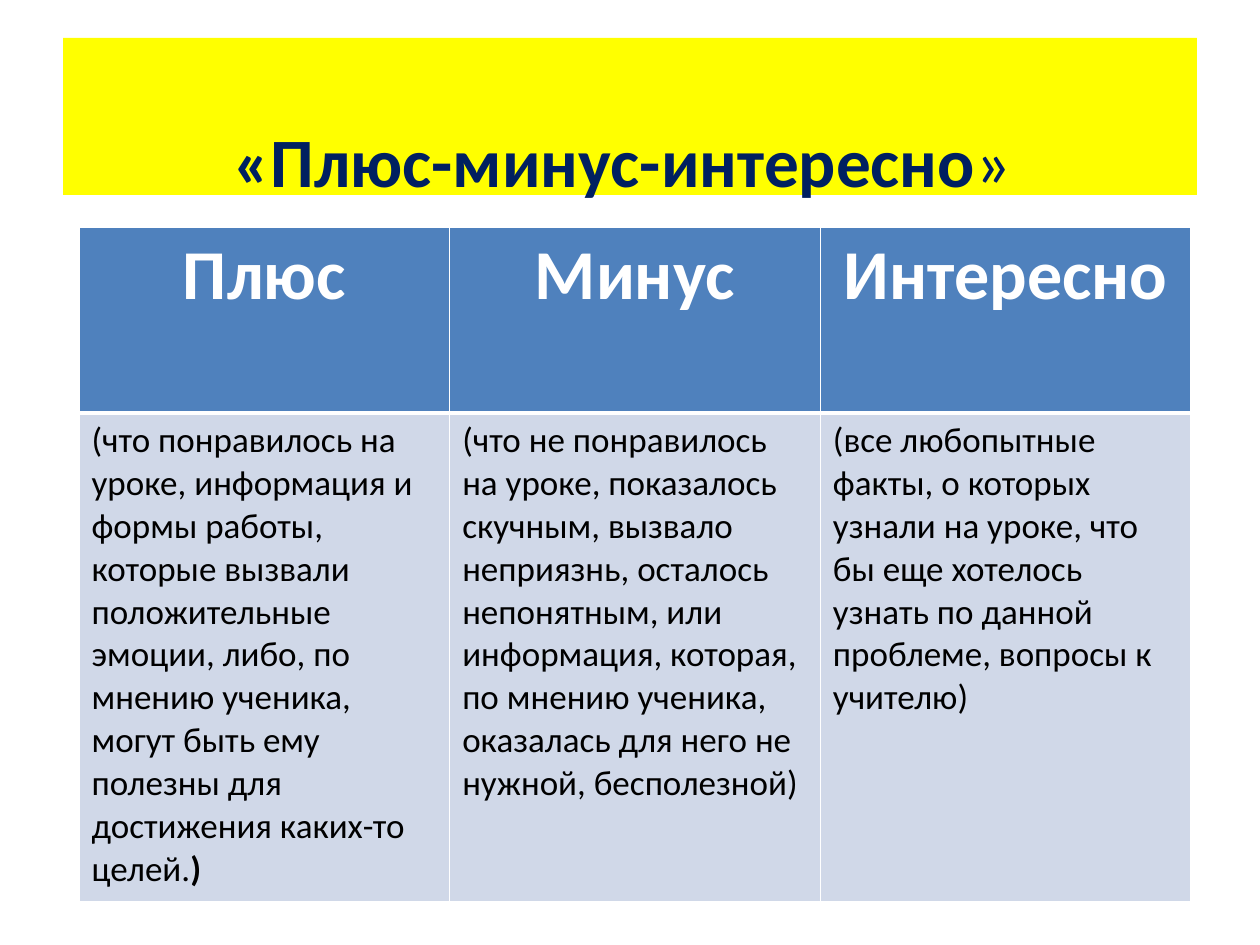
from lxml.etree import SubElement as Sub
from pptx import Presentation
from pptx.dml.color import RGBColor as Rgb
from pptx.enum.text import MSO_ANCHOR as Anchor, PP_ALIGN as Align
from pptx.oxml.ns import qn
from pptx.util import Pt

SCALE = 914400 / 126
YELLOW = Rgb(0xFF, 0xFF, 0x00)
NAVY = Rgb(0x00, 0x20, 0x60)
BLUE = Rgb(0x4F, 0x81, 0xBD)
PALE = Rgb(0xD0, 0xD8, 0xE8)
WHITE = Rgb(0xFF, 0xFF, 0xFF)
BLACK = Rgb(0x00, 0x00, 0x00)
FONT = "Calibri"

COLS = [
    ("Плюс", ["(что понравилось на уроке, информация и формы работы, "
              "которые вызвали положительные эмоции, либо, по мнению "
              "ученика, могут быть ему полезны для достижения "
              "каких-то целей.", ")"]),
    ("Минус", ["(что не понравилось на уроке, показалось скучным, вызвало "
               "неприязнь, осталось непонятным, или информация, которая, "
               "по мнению ученика, оказалась для него не нужной, "
               "бесполезной)"]),
    ("Интересно", ["(все любопытные факты, о которых узнали на уроке, что "
                   "бы еще хотелось узнать по данной проблеме, вопросы к "
                   "учителю)"]),
]


def px(n):
    return round(n * SCALE)


def style(font, size, color):
    font.name = FONT
    font.size = Pt(size)
    font.color.rgb = color


def add_title(slide, x, y, w, h):
    title = slide.shapes.title
    title.left, title.top, title.width, title.height = map(px, (x, y, w, h))
    title.fill.solid()
    title.fill.fore_color.rgb = YELLOW
    frame = title.text_frame
    frame.word_wrap = True
    frame.vertical_anchor = Anchor.BOTTOM
    frame.margin_bottom = px(-6)
    para = frame.paragraphs[0]
    para.alignment = Align.CENTER
    style(para.font, 39.6, NAVY)
    for text, bold in (("«Плюс-минус-интересно", True), ("» ", False)):
        run = para.add_run()
        run.text = text
        run.font.bold = bold
        style(run.font, 39.6, NAVY)


def set_edges(cell, top, bottom):
    props = cell._tc.get_or_add_tcPr()
    edges = (("a:lnL", 1), ("a:lnR", 1), ("a:lnT", top), ("a:lnB", bottom))
    for spot, (tag, width) in enumerate(edges):
        line = Sub(props, qn(tag), w=str(Pt(width)))
        fill = Sub(line, qn("a:solidFill"))
        Sub(fill, qn("a:srgbClr"), val=str(WHITE))
        props.insert(spot, line)


def fill_cell(cell, parts, size, color, back, align):
    cell.fill.solid()
    cell.fill.fore_color.rgb = back
    para = cell.text_frame.paragraphs[0]
    para.alignment = align
    style(para.font, size, color)
    for spot, text in enumerate(parts):
        run = para.add_run()
        run.text = text
        run.font.bold = back == BLUE or spot > 0
        style(run.font, size, color)


def add_grid(slide, x, y, w, h, head):
    frame = slide.shapes.add_table(2, len(COLS), *map(px, (x, y, w, h)))
    table = frame.table
    table.rows[0].height = px(head)
    table.rows[1].height = px(h - head)
    for col, (name, parts) in enumerate(COLS):
        table.columns[col].width = px(w / len(COLS))
        top, body = table.cell(0, col), table.cell(1, col)
        fill_cell(top, [name], 40, WHITE, BLUE, Align.CENTER)
        fill_cell(body, parts, 20, BLACK, PALE, Align.LEFT)
        set_edges(top, 1, 3)
        set_edges(body, 3, 1)


def main():
    deck = Presentation()
    deck.slide_width, deck.slide_height = px(1260), px(945)
    slide = deck.slides.add_slide(deck.slide_layouts[5])
    add_title(slide, 63, 38, 1134, 157)
    add_grid(slide, 79, 227, 1112, 675, 186)
    deck.save("out.pptx")


if __name__ == "__main__":
    main()
